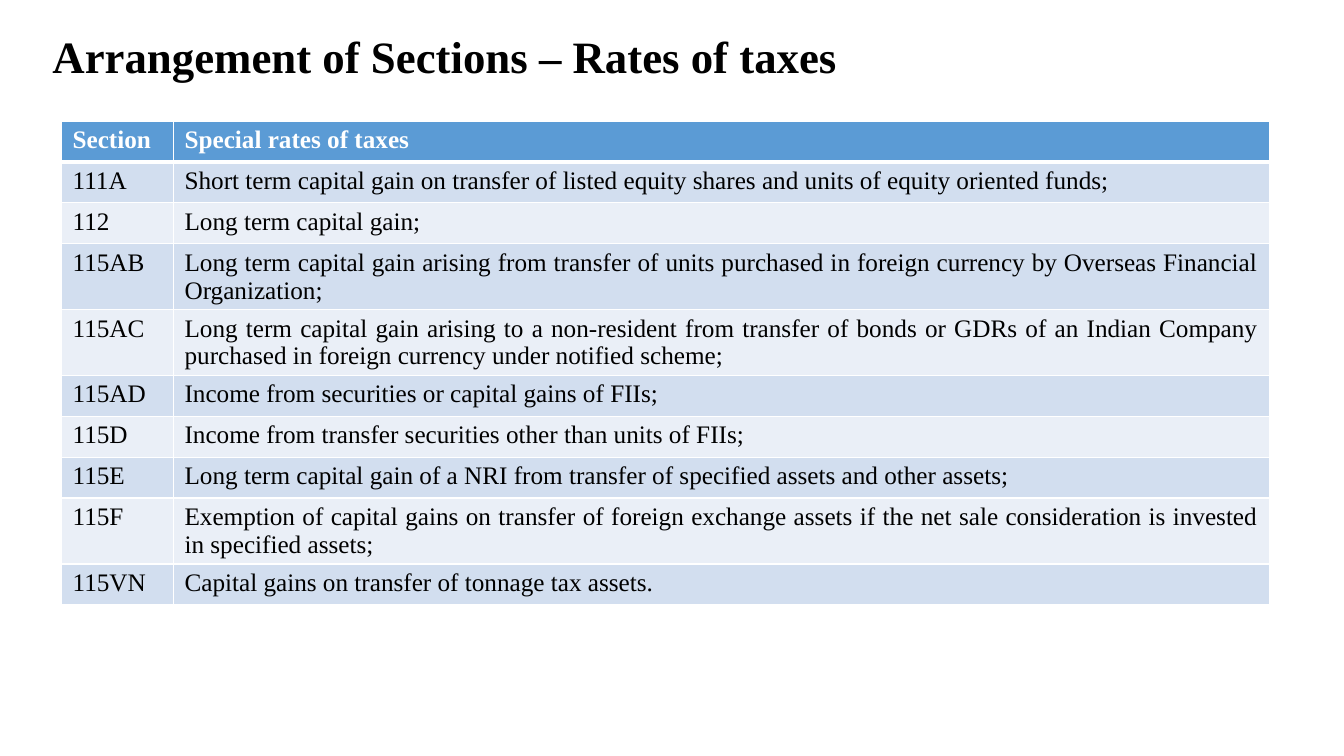
from lxml import etree
from pptx import Presentation
from pptx.dml.color import RGBColor
from pptx.enum.text import MSO_ANCHOR, PP_ALIGN
from pptx.oxml.ns import qn
from pptx.util import Inches, Pt

LEFT, JUSTIFY = PP_ALIGN.LEFT, PP_ALIGN.JUSTIFY
MIDDLE = MSO_ANCHOR.MIDDLE
TITLE_ONLY = 5

COLORS = {
    "text": "000000",
    "header_text": "FFFFFF",
    "header": "5B9BD5",
    "odd_row": "D2DEEF",
    "even_row": "EAEFF7",
    "border": "FFFFFF",
}

SECTION_RATES = [
    ("Section", "Special rates of taxes"),
    ("111A", "Short term capital gain on transfer of listed equity shares and units of equity oriented funds;"),
    ("112", "Long term capital gain;"),
    ("115AB", "Long term capital gain arising from transfer of units purchased in foreign currency "
              "by Overseas Financial Organization;"),
    ("115AC", "Long term capital gain arising to a non-resident from transfer of bonds or GDRs "
              "of an Indian Company purchased in foreign currency under notified scheme;"),
    ("115AD", "Income from securities or capital gains of FIIs;"),
    ("115D", "Income from transfer securities other than units of FIIs;"),
    ("115E", "Long term capital gain of a NRI from transfer of specified assets and other assets;"),
    ("115F", "Exemption of capital gains on transfer of foreign exchange assets if the net sale "
             "consideration is invested in specified assets;"),
    ("115VN", "Capital gains on transfer of tonnage tax assets."),
]


class SlideBuilder:
    """Holds the style and the slide; lengths are percent of the slide's size."""

    font_name = "Times New Roman"

    def __init__(self, deck):
        self.width, self.height = deck.slide_width, deck.slide_height
        self.slide = deck.slides.add_slide(deck.slide_layouts[TITLE_ONLY])

    def x(self, percent):
        return round(self.width * percent / 100)

    def y(self, percent):
        return round(self.height * percent / 100)

    def set_text(self, frame, text, size, color, bold, align):
        frame.text = text
        paragraph = frame.paragraphs[0]
        paragraph.alignment = align
        font = paragraph.font
        font.name, font.size, font.bold = self.font_name, Pt(size), bold
        font.color.rgb = RGBColor.from_string(COLORS[color])
        return paragraph

    def title(self, text, left, top, width, height):
        heading = self.slide.shapes.title
        heading.left, heading.top = self.x(left), self.y(top)
        heading.width, heading.height = self.x(width), self.y(height)
        heading.text_frame.vertical_anchor = MIDDLE
        self.set_text(heading.text_frame, text, 32, "text", True, LEFT).line_spacing = 0.9

    def borders(self, cell, top, bottom):
        properties = cell._tc.get_or_add_tcPr()
        widths = {"a:lnL": 1, "a:lnR": 1, "a:lnT": top, "a:lnB": bottom}
        for position, (tag, points) in enumerate(widths.items()):
            line = etree.Element(qn(tag), w=str(int(Pt(points))))
            fill = etree.SubElement(line, qn("a:solidFill"))
            etree.SubElement(fill, qn("a:srgbClr"), val=COLORS["border"])
            properties.insert(position, line)

    def table(self, rows, left, top, columns, row_height):
        table = self.slide.shapes.add_table(
            len(rows), len(columns), self.x(left), self.y(top),
            self.x(sum(columns)), self.y(row_height * len(rows))).table
        for column, width in zip(table.columns, columns):
            column.width = self.x(width)
        for r, texts in enumerate(rows):
            header = r == 0
            band = "header" if header else "odd_row" if r % 2 else "even_row"
            for c, text in enumerate(texts):
                cell = table.cell(r, c)
                cell.fill.solid()
                cell.fill.fore_color.rgb = RGBColor.from_string(COLORS[band])
                cell.margin_left = cell.margin_right = Inches(0.11)
                self.set_text(cell.text_frame, text, 18, "header_text" if header else "text",
                              header, JUSTIFY if c else LEFT)
                self.borders(cell, 3 if r == 1 else 1, 3 if header else 1)


def main():
    deck = Presentation()
    deck.slide_width, deck.slide_height = Inches(13.33), Inches(7.5)
    builder = SlideBuilder(deck)

    # Heading
    builder.title("Arrangement of Sections – Rates of taxes", 3.15, 1.47, 89.42, 12.67)

    # Sections and their special rates
    builder.table(SECTION_RATES, left=4.58, top=16, columns=(8.33, 81.55), row_height=5.41)

    deck.save("out.pptx")


if __name__ == "__main__":
    main()
